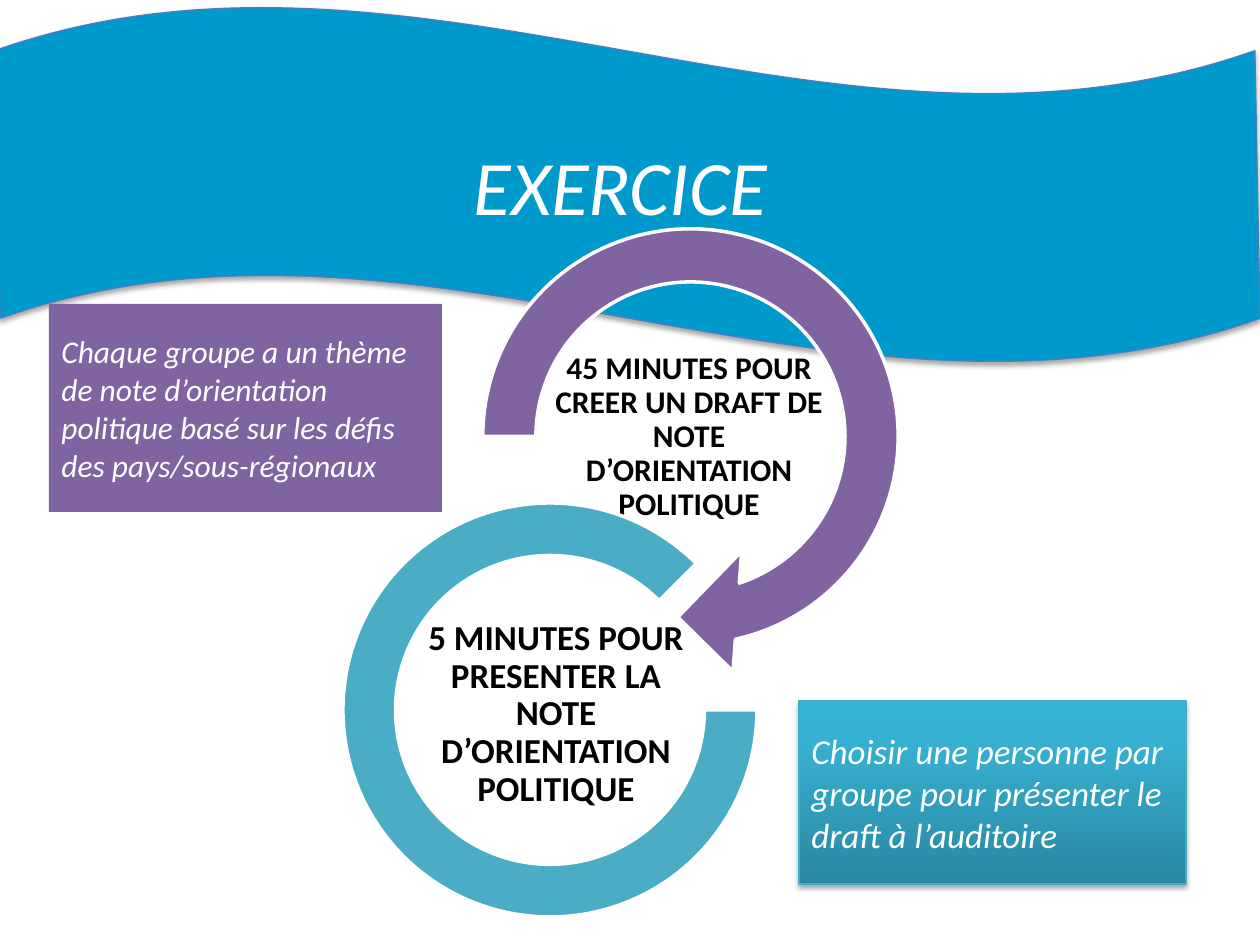
from copy import deepcopy

from pptx import Presentation
from pptx.dml.color import RGBColor
from pptx.enum.shapes import MSO_SHAPE
from pptx.enum.text import MSO_ANCHOR, PP_ALIGN
from pptx.oxml import parse_xml
from pptx.oxml.ns import nsdecls, qn
from pptx.util import Pt

WAVE, RECT = MSO_SHAPE.WAVE, MSO_SHAPE.RECTANGLE
CIRCULAR_ARROW, BLOCK_ARC = MSO_SHAPE.CIRCULAR_ARROW, MSO_SHAPE.BLOCK_ARC
MIDDLE, TOP = MSO_ANCHOR.MIDDLE, MSO_ANCHOR.TOP
LEFT, CENTER = PP_ALIGN.LEFT, PP_ALIGN.CENTER
PX = 914400 / 126
SHADOW = (
    f'<a:effectLst {nsdecls("a")}>'
    '<a:outerShdw blurRad="39370" dist="22860" dir="5400000" rotWithShape="0">'
    '<a:srgbClr val="000000"><a:alpha val="35000"/></a:srgbClr>'
    '</a:outerShdw></a:effectLst>'
)


def color(value):
    return RGBColor.from_string(value)


def write(shape, text, size, ink, align, anchor, bold=False, italic=False):
    frame = shape.text_frame
    frame.word_wrap = True
    frame.vertical_anchor = anchor
    frame.text = text
    paragraph = frame.paragraphs[0]
    paragraph.alignment = align
    font = paragraph.runs[0].font
    font.name, font.size = "Calibri", Pt(size)
    font.bold, font.italic = bold, italic
    font.color.rgb = color(ink)


prs = Presentation()
prs.slide_width, prs.slide_height = round(1260 * PX), round(945 * PX)
slide = prs.slides.add_slide(prs.slide_layouts[6])
shapes = slide.shapes

banner = shapes.add_shape(WAVE, *(round(v * PX) for v in (-5, 6, 1265, 357)))
banner.adjustments[0], banner.adjustments[1] = 0.125, 0.002
banner.fill.solid()
banner.fill.fore_color.rgb = color("0099CC")
banner.line.color.rgb = color("4B7EBC")
banner.line.width = Pt(0.75)

title = shapes.add_textbox(*(round(v * PX) for v in (25, 132, 1191, 106)))
write(title, "EXERCICE", 44, "FFFFFF", CENTER, TOP, italic=True)

steps = [
    (CIRCULAR_ARROW, (449, 195, 483, 483), (0.11, 11.423, 45, 108, 0.125), "8064A2",
     (554, 334), "45 MINUTES POUR CREER UN DRAFT DE NOTE D’ORIENTATION POLITIQUE", 18),
    (BLOCK_ARC, (343, 503, 414, 414), (0, 189, 0.127), "4BACC6",
     (421, 611), "5 MINUTES POUR PRESENTER LA NOTE D’ORIENTATION POLITIQUE", 20),
]
for kind, ring_box, adjustments, ring_color, label_at, wording, size in steps:
    ring = shapes.add_shape(kind, *(round(v * PX) for v in ring_box))
    for index, value in enumerate(adjustments):
        ring.adjustments[index] = value
    ring.shadow.inherit = False
    ring.fill.solid()
    ring.fill.fore_color.rgb = color(ring_color)
    ring.line.color.rgb = color("FFFFFF")
    ring.line.width = Pt(2)

    label = shapes.add_textbox(*(round(v * PX) for v in (*label_at, 270, 207)))
    write(label, wording, size, "000000", CENTER, MIDDLE, bold=True)
    label.text_frame.paragraphs[0].line_spacing = 0.9
    margin = round(PX)
    label.text_frame.margin_left = label.text_frame.margin_right = margin
    label.text_frame.margin_top = label.text_frame.margin_bottom = margin

theme_note = shapes.add_shape(RECT, *(round(v * PX) for v in (49, 304, 393, 208)))
theme_note.shadow.inherit = False
theme_note.fill.solid()
theme_note.fill.fore_color.rgb = color("8064A2")
theme_note.line.fill.background()
write(theme_note, "Chaque groupe a un thème de note d’orientation politique basé sur "
      "les défis des pays/sous-régionaux", 18, "FFFFFF", LEFT, MIDDLE, italic=True)

speaker_note = shapes.add_shape(RECT, *(round(v * PX) for v in (799, 701, 387, 183)))
speaker_note.fill.gradient()
speaker_note.fill.gradient_angle = 90
stop_list = speaker_note.element.spPr.find(".//" + qn("a:gsLst"))
stop_list.append(deepcopy(stop_list[-1]))
gradient = [(0, "2A88A2"), (0.8, "37B1D2"), (1, "34B4D6")]
for stop, (position, shade) in zip(speaker_note.fill.gradient_stops, gradient):
    stop.position = position
    stop.color.rgb = color(shade)
speaker_note.line.color.rgb = color("46AAC5")
speaker_note.line.width = Pt(0.75)
write(speaker_note, "Choisir une personne par groupe pour présenter le draft à l’auditoire",
      20, "FFFFFF", LEFT, MIDDLE, italic=True)

for shaded in (banner, speaker_note):
    shaded.element.spPr.append(parse_xml(SHADOW))

prs.save("out.pptx")
